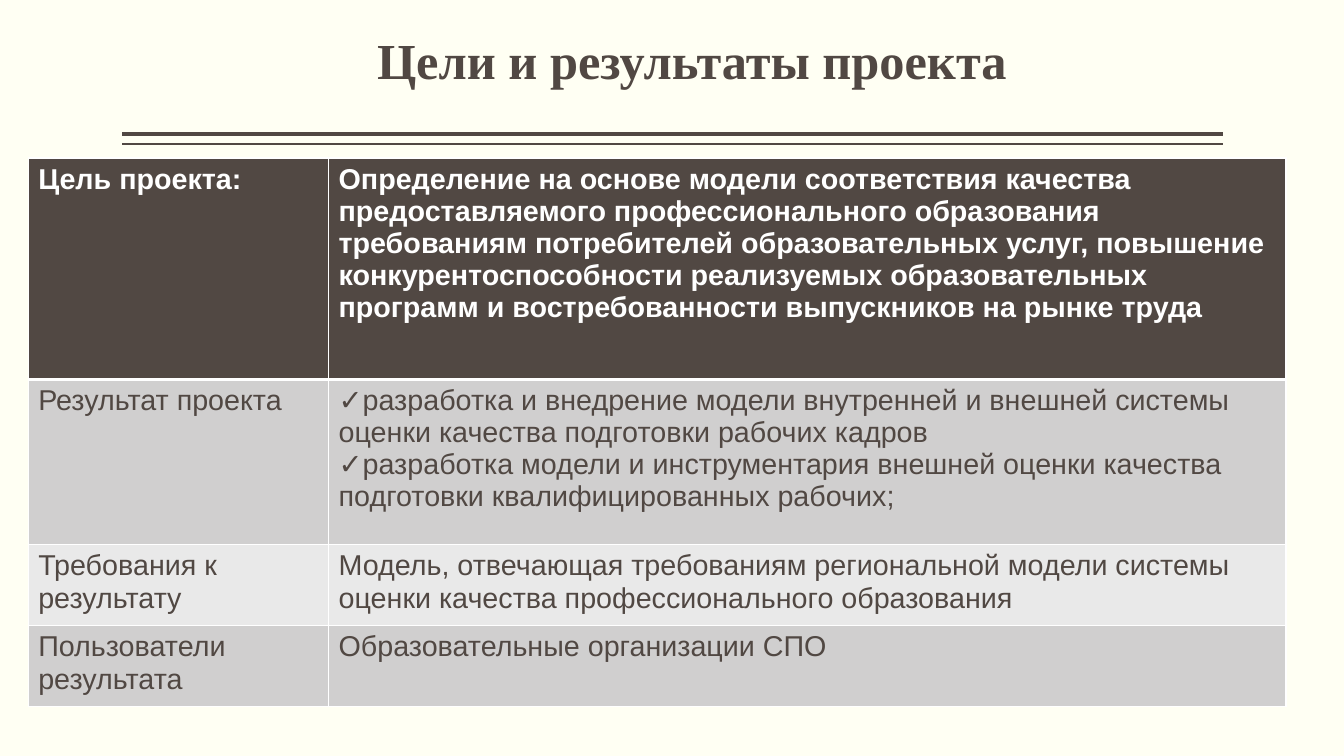
from lxml.etree import SubElement
from pptx import Presentation
from pptx.dml.color import RGBColor
from pptx.enum.shapes import MSO_CONNECTOR as Link
from pptx.enum.text import MSO_ANCHOR as Anchor, MSO_AUTO_SIZE as Fit, PP_ALIGN as Align
from pptx.oxml.ns import qn
from pptx.util import Cm, Pt

DARK, WHITE, CREAM = "514843", "FFFFFF", "FFFFF3"
GRAY, LIGHT = "D0CFCF", "E9E9E9"

# Fill, text colour and row height in cm
STYLES = [(DARK, WHITE, 5.58), (GRAY, DARK, 4.17), (LIGHT, DARK, 2.04), (GRAY, DARK, 2.03)]
ROWS = [
    ("Цель проекта:", [
        "Определение на основе модели соответствия качества предоставляемого "
        "профессионального образования требованиям потребителей образовательных услуг, "
        "повышение конкурентоспособности реализуемых образовательных программ и "
        "востребованности выпускников на рынке труда"]),
    ("Результат проекта", [
        "разработка и внедрение модели внутренней и внешней системы оценки качества "
        "подготовки рабочих кадров",
        "разработка модели и инструментария внешней оценки качества подготовки "
        "квалифицированных рабочих;"]),
    ("Требования к результату", [
        "Модель, отвечающая требованиям региональной модели системы оценки качества "
        "профессионального образования"]),
    ("Пользователи результата", ["Образовательные организации СПО"]),
]


def color(code):
    return RGBColor.from_string(code)


def style(para, face, size, code, bold):
    font = para.font
    font.name, font.size, font.bold = face, Pt(size), bold
    font.color.rgb = color(code)


def add_title(slide, left, top, width, height):
    box = slide.shapes.add_textbox(Cm(left), Cm(top), Cm(width), Cm(height))
    frame = box.text_frame
    frame.word_wrap = True
    frame.auto_size = Fit.SHAPE_TO_FIT_TEXT
    para = frame.paragraphs[0]
    para.text = "Цели и результаты проекта"
    para.alignment = Align.CENTER
    style(para, "Times New Roman", 36, DARK, True)


def add_rules(slide, left, top, width, gap):
    for i, weight in enumerate((3, 1)):
        y = Cm(top + i * gap)
        rule = slide.shapes.add_connector(Link.STRAIGHT, Cm(left + width), y, Cm(left), y)
        rule.line.color.rgb = color(DARK)
        rule.line.width = Pt(weight)
        SubElement(rule._element.spPr, qn("a:effectLst"))


def add_borders(cell, head, under):
    # Borders come before the fill in the cell properties
    props = cell._tc.get_or_add_tcPr()
    for i, side in enumerate("LRTB"):
        thick = (head and side == "B") or (under and side == "T")
        edge = props.makeelement(qn("a:ln" + side), {"w": str(Pt(3 if thick else 1))})
        fill = SubElement(edge, qn("a:solidFill"))
        SubElement(fill, qn("a:srgbClr"), val=WHITE)
        props.insert(i, edge)


def add_check(para):
    props = para._p.get_or_add_pPr()
    props.set("marL", "0")
    props.set("indent", "0")
    SubElement(props, qn("a:buFont"), typeface="Arial")
    SubElement(props, qn("a:buChar"), char="✓")


def fill_cell(cell, lines, row):
    back, ink, _ = STYLES[row]
    cell.fill.solid()
    cell.fill.fore_color.rgb = color(back)
    cell.vertical_anchor = Anchor.TOP
    add_borders(cell, row == 0, row == 1)
    frame = cell.text_frame
    frame.text = "\n".join(lines)
    for para in frame.paragraphs:
        style(para, "Arial", 20.5, ink, row == 0)
        if len(lines) > 1:
            add_check(para)


def add_goals(slide, left, top, width, first):
    tall = sum(height for _, _, height in STYLES)
    table = slide.shapes.add_table(
        len(ROWS), 2, Cm(left), Cm(top), Cm(width), Cm(tall)).table
    table.columns[0].width = Cm(first)
    table.columns[1].width = Cm(width - first)
    for i, (label, lines) in enumerate(ROWS):
        table.rows[i].height = Cm(STYLES[i][2])
        fill_cell(table.cell(i, 0), [label], i)
        fill_cell(table.cell(i, 1), lines, i)


def main():
    deck = Presentation()
    deck.slide_width, deck.slide_height = Cm(33.87), Cm(19.05)
    slide = deck.slides.add_slide(deck.slide_layouts[6])
    slide.background.fill.solid()
    slide.background.fill.fore_color.rgb = color(CREAM)
    add_rules(slide, 3.07, 3.38, 27.74, 0.25)
    add_title(slide, 4.83, 0.61, 25.22, 1.8)
    add_goals(slide, 0.71, 3.98, 31.7, 7.57)
    deck.save("out.pptx")


if __name__ == "__main__":
    main()
